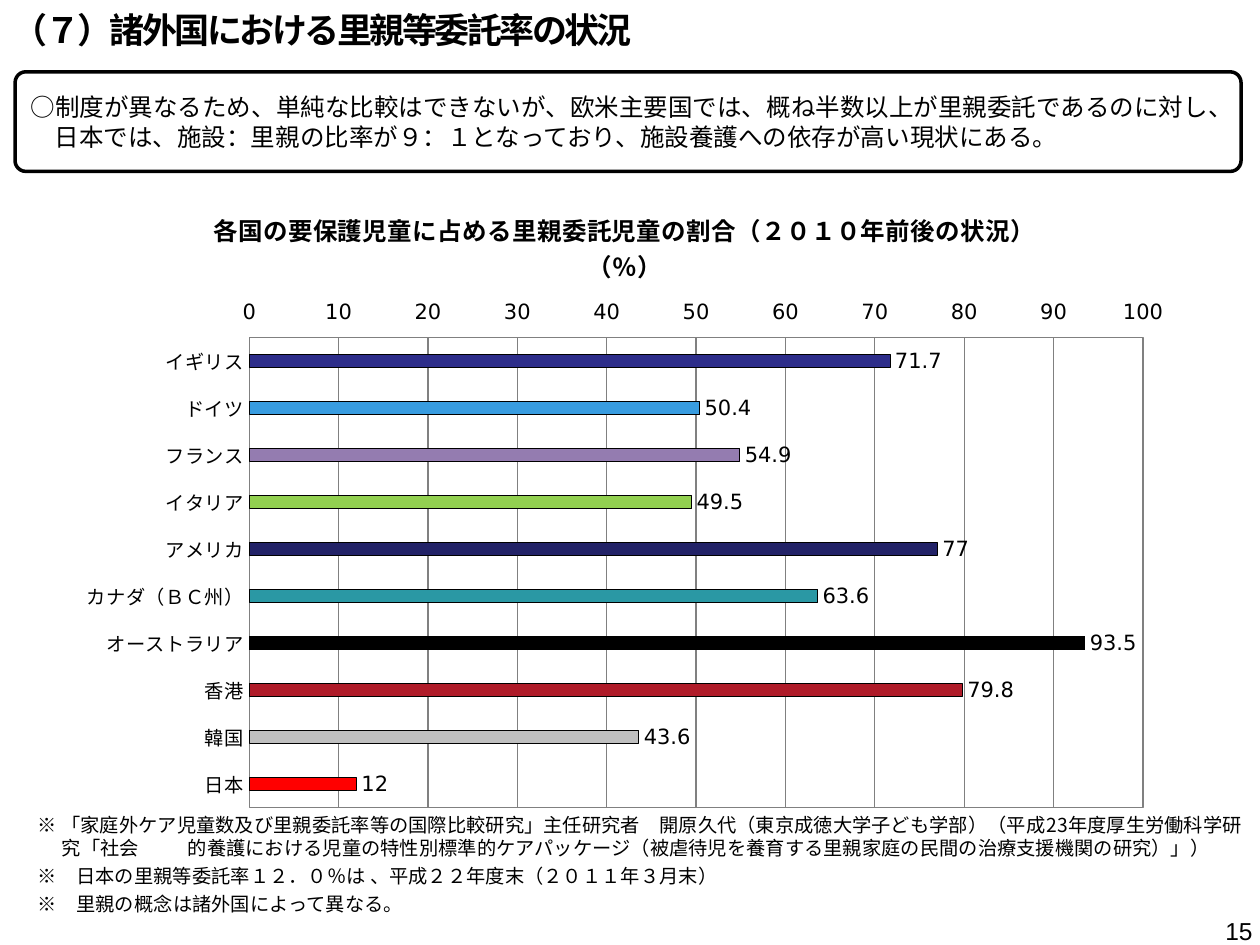
from dataclasses import dataclass

from lxml import etree
from pptx import Presentation
from pptx.chart.data import CategoryChartData
from pptx.dml.color import RGBColor
from pptx.enum.chart import XL_CHART_TYPE, XL_LABEL_POSITION, XL_TICK_LABEL_POSITION, XL_TICK_MARK
from pptx.enum.shapes import MSO_SHAPE
from pptx.enum.text import MSO_ANCHOR, MSO_AUTO_SIZE, PP_ALIGN
from pptx.oxml import parse_xml
from pptx.oxml.ns import nsdecls, qn
from pptx.util import Inches, Pt

BAR = XL_CHART_TYPE.BAR_CLUSTERED
OUTSIDE = XL_LABEL_POSITION.OUTSIDE_END
LOW = XL_TICK_LABEL_POSITION.LOW
NO_TICK = XL_TICK_MARK.NONE
ROUNDED = MSO_SHAPE.ROUNDED_RECTANGLE
MIDDLE, TOP = MSO_ANCHOR.MIDDLE, MSO_ANCHOR.TOP
LEFT, RIGHT = PP_ALIGN.LEFT, PP_ALIGN.RIGHT
NO_AUTOFIT = MSO_AUTO_SIZE.NONE


@dataclass(frozen=True)
class Theme:
    ink: str = "000000"
    paper: str = "FFFFFF"
    grid: str = "808080"
    japanese: str = "Noto Sans CJK JP"
    latin: str = "Calibri"
    number: str = "Arial"
    chart: str = "DejaVu Sans"
    title_size: int = 20
    lead_size: int = 14
    note_size: int = 11
    axis_size: int = 12
    hanging: float = 0.19


COUNTRIES = [
    ("イギリス", 71.7, "2D2D8A"),
    ("ドイツ", 50.4, "389CE0"),
    ("フランス", 54.9, "947CB0"),
    ("イタリア", 49.5, "92D050"),
    ("アメリカ", 77, "222267"),
    ("カナダ（ＢＣ州）", 63.6, "2A98A4"),
    ("オーストラリア", 93.5, "000000"),
    ("香港", 79.8, "AF1B29"),
    ("韓国", 43.6, "BFBFBF"),
    ("日本", 12, "FF0000"),
]
LEAD = (
    "○制度が異なるため、単純な比較はできないが、欧米主要国では、概ね半数以上が里親委託であるのに対し、"
    "日本では、施設：里親の比率が９：１となっており、施設養護への依存が高い現状にある。"
)
NOTES = [
    [
        "※ 「家庭外ケア児童数及び里親委託率等の国際比較研究」主任研究者　開原久代（東京成徳大学子ども学部）"
        "（平成23年度厚生労働科学研究「社会\t的養護における児童の特性別標準的ケアパッケージ"
        "（被虐待児を養育する里親家庭の民間の治療支援機関の研究）」）"
    ],
    ["※　日本の里親等委託率１２．０％は 、平成２２年度末（２０１１年３月末）"],
    ["※　里親の概念", "は諸外国によって異なる。"],
]


class SlideBuilder:
    def __init__(self, slide, theme):
        self.slide = slide
        self.theme = theme

    def place(self, shape, box):
        shape.left, shape.top, shape.width, shape.height = map(Inches, box)

    def frame(self, shape, anchor):
        frame = shape.text_frame
        frame.word_wrap = True
        frame.auto_size = NO_AUTOFIT
        frame.vertical_anchor = anchor
        return frame

    def run(self, paragraph, text, size, font=None, bold=False):
        run = paragraph.add_run()
        run.text = text
        self.style(run.font, size, font or self.theme.japanese, bold)
        east_asian = etree.SubElement(run.font._element, qn("a:ea"))
        east_asian.set("typeface", self.theme.japanese)
        return run

    def style(self, font, size, name, bold=False):
        font.size = Pt(size)
        font.bold = bold
        font.color.rgb = RGBColor.from_string(self.theme.ink)
        font.name = name

    def hang(self, paragraph):
        paragraph.alignment = LEFT
        properties = paragraph._p.get_or_add_pPr()
        indent = Inches(self.theme.hanging)
        properties.set("marL", str(indent))
        properties.set("indent", str(-indent))
        return properties

    def title(self, text, box):
        shape = self.slide.shapes.title
        self.place(shape, box)
        paragraph = self.frame(shape, MIDDLE).paragraphs[0]
        paragraph.alignment = LEFT
        run = self.run(paragraph, text, self.theme.title_size, bold=True)
        run.font._element.set("spc", "-150")

    def lead(self, text, box):
        panel = self.slide.shapes.add_shape(ROUNDED, *map(Inches, box))
        panel.shadow.inherit = False
        panel.adjustments[0] = 0.108
        panel.fill.solid()
        panel.fill.fore_color.rgb = RGBColor.from_string(self.theme.paper)
        panel.line.color.rgb = RGBColor.from_string(self.theme.ink)
        panel.line.width = Pt(2)
        frame = self.frame(panel, MIDDLE)
        frame.margin_right = Inches(0.04)
        paragraph = frame.paragraphs[0]
        self.hang(paragraph)
        self.run(paragraph, text, self.theme.lead_size)

    def notes(self, items, box, tab):
        body = self.slide.placeholders[1]
        self.place(body, box)
        frame = self.frame(body, MIDDLE)
        for index, parts in enumerate(items):
            paragraph = frame.add_paragraph() if index else frame.paragraphs[0]
            paragraph.space_before = Pt(3 if index else 0)
            properties = self.hang(paragraph)
            etree.SubElement(properties, qn("a:buNone"))
            stops = etree.SubElement(properties, qn("a:tabLst"))
            etree.SubElement(stops, qn("a:tab"), pos=str(Inches(tab)), algn="l")
            for part, font in zip(parts, (self.theme.japanese, self.theme.latin)):
                self.run(paragraph, part, self.theme.note_size, font)

    def page_number(self, text, box):
        frame = self.frame(self.slide.shapes.add_textbox(*map(Inches, box)), TOP)
        paragraph = frame.paragraphs[0]
        paragraph.alignment = RIGHT
        self.run(paragraph, text, self.theme.lead_size, self.theme.number)

    def bar_chart(self, heading, rows, box, plot_box):
        theme = self.theme
        names, rates, colours = zip(*rows)
        data = CategoryChartData()
        data.categories = names
        data.add_series("里親委託率", rates)
        chart = self.slide.shapes.add_chart(BAR, *map(Inches, box), data).chart
        self.style(chart.font, theme.axis_size, theme.chart)
        chart.has_legend = False
        chart.has_title = True
        self.run(chart.chart_title.text_frame.paragraphs[0], heading,
                 theme.lead_size, theme.chart, bold=True)

        countries, percent = chart.category_axis, chart.value_axis
        countries.reverse_order = True
        self.style(countries.tick_labels.font, theme.note_size, theme.chart)
        percent.minimum_scale, percent.maximum_scale, percent.major_unit = 0, 100, 10
        percent.tick_label_position = LOW
        percent.tick_labels.number_format = "General"
        percent.tick_labels.number_format_is_linked = False
        percent.has_major_gridlines = True
        for axis in (countries, percent):
            axis.major_tick_mark = axis.minor_tick_mark = NO_TICK
        for part in (countries, percent, percent.major_gridlines):
            part.format.line.color.rgb = RGBColor.from_string(theme.grid)
            part.format.line.width = Pt(0.75)

        plot = chart.plots[0]
        plot.gap_width, plot.overlap = 252, -30
        plot.vary_by_categories = False
        plot.has_data_labels = True
        labels = plot.data_labels
        labels.show_value = True
        labels.position = OUTSIDE
        labels.number_format = "General"
        labels.number_format_is_linked = False
        self.style(labels.font, theme.axis_size, theme.chart)
        for index, colour in enumerate(colours):
            bar = plot.series[0].points[index].format
            bar.fill.solid()
            bar.fill.fore_color.rgb = RGBColor.from_string(colour)
            bar.line.color.rgb = RGBColor.from_string(theme.ink)
            bar.line.width = Pt(0.5)
        self.plot_area(chart, plot_box)

    def plot_area(self, chart, plot_box):
        area = chart._chartSpace.find(".//" + qn("c:plotArea"))
        for old in area.findall(qn("c:layout")):
            area.remove(old)
        sizes = "".join(f'<c:{key} val="{value}"/>' for key, value in zip("xywh", plot_box))
        area.insert(0, parse_xml(
            f'<c:layout {nsdecls("c")}><c:manualLayout><c:layoutTarget val="inner"/>'
            f'<c:xMode val="edge"/><c:yMode val="edge"/>{sizes}</c:manualLayout></c:layout>'))
        area.append(parse_xml(
            f'<c:spPr {nsdecls("c", "a")}><a:noFill/><a:ln w="{Pt(0.75)}"><a:solidFill>'
            f'<a:srgbClr val="{self.theme.grid}"/></a:solidFill></a:ln></c:spPr>'))


def main():
    deck = Presentation()
    deck.slide_width, deck.slide_height = Inches(10), Inches(7.5)
    page = SlideBuilder(deck.slides.add_slide(deck.slide_layouts[1]), Theme())
    page.title("（７）諸外国における里親等委託率の状況", (0, 0, 5.39, 0.47))
    page.lead(LEAD, (0.12, 0.57, 9.73, 0.79))
    page.bar_chart("各国の要保護児童に占める里親委託児童の割合（２０１０年前後の状況）（％）",
                   COUNTRIES, (0.51, 1.47, 8.9, 5.04), (0.165, 0.24, 0.797, 0.74))
    page.notes(NOTES, (0.2, 6.35, 9.8, 1.02), 1.56)
    page.page_number("15", (9.1, 7.22, 0.94, 0.28))
    deck.save("out.pptx")


if __name__ == "__main__":
    main()
